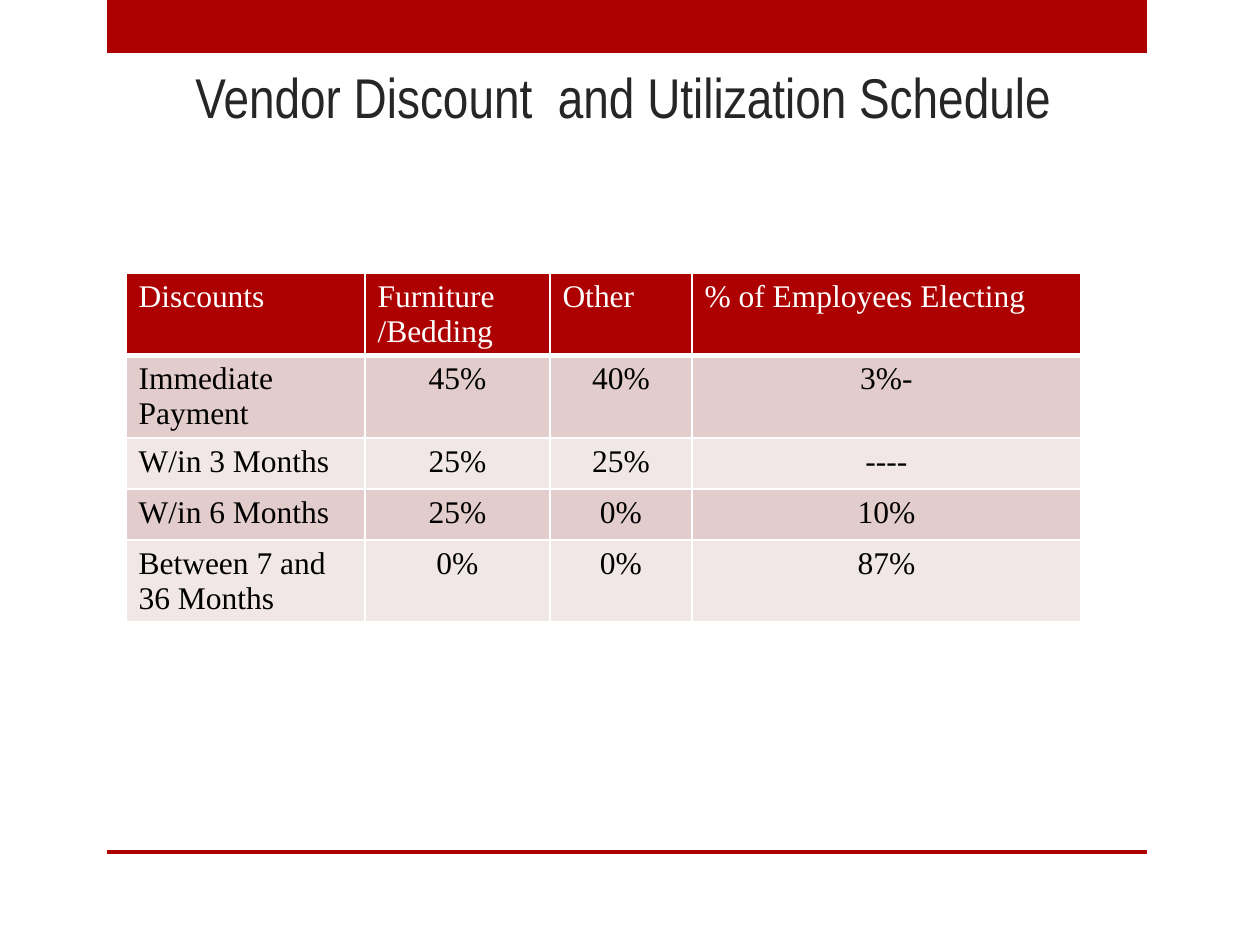
"""Build the vendor discount and utilization schedule slide."""
from lxml.etree import SubElement
from pptx import Presentation
from pptx.dml.color import RGBColor
from pptx.enum.shapes import MSO_SHAPE
from pptx.enum.text import MSO_ANCHOR, MSO_AUTO_SIZE, PP_ALIGN
from pptx.oxml.ns import qn
from pptx.util import Pt

PX = 914400 / 126
THEME = {
    "red": "AD0101", "title": "262626", "white": "FFFFFF", "black": "000000",
    "bands": ["E3CCCC", "F1E7E7"],
    "title_font": "Arial Narrow", "title_size": 32,
    "body_font": "Times New Roman", "body_size": 18,
}


def px(*lengths):
    return [round(n * PX) for n in lengths]


def style(p, name, size, color, align):
    p.alignment = align
    for r in p.runs:
        for key, value in {"name": name, "size": Pt(size), "bold": False}.items():
            setattr(r.font, key, value)
        r.font.color.rgb = RGBColor.from_string(color)


prs = Presentation()
prs.slide_width, prs.slide_height = px(1260, 945)
s = prs.slides.add_slide(prs.slide_layouts[5])

for top, height in [(0, 53), (850, 4)]:
    bar = s.shapes.add_shape(MSO_SHAPE.RECTANGLE, *px(107, top, 1040, height))
    bar.shadow.inherit = False
    bar.fill.solid()
    bar.fill.fore_color.rgb = RGBColor.from_string(THEME["red"])
    bar.line.fill.background()

title = s.shapes.title
title.left, title.top, title.width, title.height = px(0, 42, 1260, 94)
tf = title.text_frame
tf.text = "Vendor Discount  and Utilization Schedule "
for key, value in {"vertical_anchor": MSO_ANCHOR.BOTTOM, "word_wrap": True,
                   "auto_size": MSO_AUTO_SIZE.NONE}.items():
    setattr(tf, key, value)
style(tf.paragraphs[0], THEME["title_font"], THEME["title_size"],
      THEME["title"], PP_ALIGN.CENTER)

rows = [
    ["Discounts", "Furniture /Bedding", "Other", "% of Employees Electing"],
    ["Immediate Payment", "45%", "40%", "3%-"],
    ["W/in 3 Months", "25%", "25%", "----"],
    ["W/in 6 Months", "25%", "0%", "10%"],
    ["Between 7 and 36 Months", "0%", "0%", "87%"],
]
widths = px(239, 185, 142, 389)
frame = s.shapes.add_table(len(rows), len(widths), *px(126, 273, 955, 367))
table = frame.table
for col, width in zip(table.columns, widths):
    col.width = width
for row in table.rows:
    row.height = px(51)[0]

for i, values in enumerate(rows):
    header = i == 0
    fill = THEME["red"] if header else THEME["bands"][(i - 1) % 2]
    color = THEME["white"] if header else THEME["black"]
    for j, value in enumerate(values):
        cell = table.cell(i, j)
        cell.text = value
        align = PP_ALIGN.LEFT if header or j == 0 else PP_ALIGN.CENTER
        style(cell.text_frame.paragraphs[0], THEME["body_font"],
              THEME["body_size"], color, align)
        tcPr = cell._tc.get_or_add_tcPr()
        for side in "LRTB":
            weight = 3 if header and side == "B" else 1
            ln = SubElement(tcPr, qn(f"a:ln{side}"), w=str(Pt(weight)))
            solid = SubElement(ln, qn("a:solidFill"))
            SubElement(solid, qn("a:srgbClr"), val=THEME["white"])
        cell.fill.solid()
        cell.fill.fore_color.rgb = RGBColor.from_string(fill)

prs.save("out.pptx")
